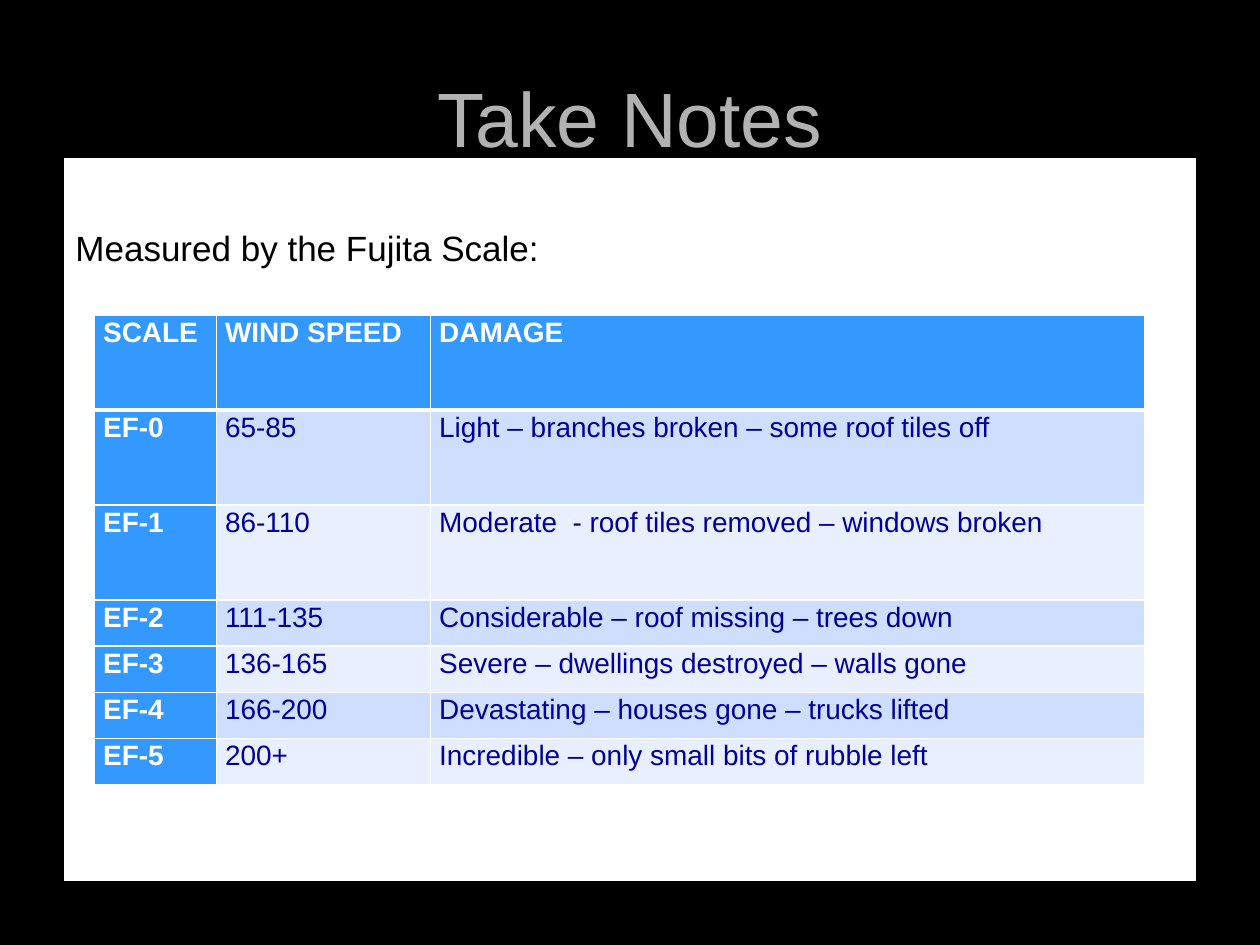
import dataclasses

import pptx
import pptx.dml.color
import pptx.enum.shapes
import pptx.enum.text
import pptx.oxml
import pptx.oxml.ns
import pptx.util

Pt = pptx.util.Pt


@dataclasses.dataclass(frozen=True)
class Theme:
    """Colours, font and type sizes of the slide."""
    font: str = "Arial"
    black: str = "000000"
    white: str = "FFFFFF"
    title: str = "B2B2B2"
    accent: str = "3399FF"
    ink: str = "010199"
    bands: tuple = ("CEDEFF", "E8EFFF")
    title_size: int = 44
    body_size: int = 20
    cell_size: int = 16


THEME = Theme()
COLUMNS = (69.6, 122.4, 408)
ROWS = (54.3,) * 3 + (26.4,) * 4
DATA = (
    ("SCALE", "WIND SPEED", "DAMAGE"),
    ("EF-0", "65-85", "Light – branches broken – some roof tiles off"),
    ("EF-1", "86-110", "Moderate  - roof tiles removed – windows broken"),
    ("EF-2", "111-135", "Considerable – roof missing – trees down"),
    ("EF-3", "136-165", "Severe – dwellings destroyed – walls gone"),
    ("EF-4", "166-200", "Devastating – houses gone – trucks lifted"),
    ("EF-5", "200+", "Incredible – only small bits of rubble left"),
)


def rgb(value):
    """Return the colour for a hex string."""
    return pptx.dml.color.RGBColor.from_string(value)


def paint(fill, color):
    """Make a fill solid in one colour."""
    fill.solid()
    fill.fore_color.rgb = rgb(color)


def write(tf, text, *, size, color, bold=False, align="LEFT", before=0, spacing=None):
    """Write one formatted paragraph into a text frame."""
    p = tf.paragraphs[0]
    p.alignment = pptx.enum.text.PP_ALIGN[align]
    p.space_before = Pt(before)
    if spacing:
        p.line_spacing = spacing
    r = p.add_run()
    r.text = text
    r.font.name = THEME.font
    r.font.size = Pt(size)
    r.font.bold = bold
    r.font.color.rgb = rgb(color)


def add_panel(s, x, y, w, h):
    """Add the white panel behind the content."""
    rect = pptx.enum.shapes.MSO_SHAPE.RECTANGLE
    sp = s.shapes.add_shape(rect, Pt(x), Pt(y), Pt(w), Pt(h))
    sp.shadow.inherit = False
    paint(sp.fill, THEME.white)
    sp.line.color.rgb = rgb(THEME.black)
    sp.line.width = Pt(0.75)


def add_text(s, text, x, y, w, h, anchor="TOP", **style):
    """Add a wrapped text box."""
    tf = s.shapes.add_textbox(Pt(x), Pt(y), Pt(w), Pt(h)).text_frame
    tf.word_wrap = True
    tf.vertical_anchor = pptx.enum.text.MSO_ANCHOR[anchor]
    write(tf, text, **style)


def set_borders(cell, color, **widths):
    """Draw the cell borders, with widths keyed by side in schema order."""
    ns = pptx.oxml.ns.nsdecls("a")
    tcPr = cell._tc.get_or_add_tcPr()
    for i, (side, width) in enumerate(widths.items()):
        tcPr.insert(i, pptx.oxml.parse_xml(
            f'<a:ln{side} {ns} w="{Pt(width)}"><a:solidFill>'
            f'<a:srgbClr val="{color}"/></a:solidFill></a:ln{side}>'))


def fill_cell(cell, text, row, col):
    """Format one table cell by its row and column."""
    heading = row == 0 or col == 0
    cell.margin_left = cell.margin_right = Pt(5)
    cell.margin_top = cell.margin_bottom = 0
    paint(cell.fill, THEME.accent if heading else THEME.bands[(row - 1) % 2])
    set_borders(cell, THEME.white, L=1, R=1,
                T=3 if row == 1 else 1, B=3 if row == 0 else 1)
    write(cell.text_frame, text, size=THEME.cell_size, bold=heading,
          color=THEME.white if heading else THEME.ink, spacing=1.07)


def add_scale_table(s, x, y):
    """Add the table of the scale."""
    shape = s.shapes.add_table(len(ROWS), len(COLUMNS), Pt(x), Pt(y),
                               Pt(sum(COLUMNS)), Pt(sum(ROWS)))
    table = shape.table
    for column, width in zip(table.columns, COLUMNS):
        column.width = Pt(width)
    for row, height in zip(table.rows, ROWS):
        row.height = Pt(height)
    for i, texts in enumerate(DATA):
        for j, text in enumerate(texts):
            fill_cell(table.cell(i, j), text, i, j)


def main():
    """Build and save the slide."""
    prs = pptx.Presentation()
    prs.slide_width, prs.slide_height = Pt(720), Pt(540)
    s = prs.slides.add_slide(prs.slide_layouts[6])
    paint(s.background.fill, THEME.black)
    add_panel(s, 36, 90, 648, 414)
    add_text(s, "Take Notes", 36, 21.6, 648, 90, anchor="MIDDLE",
             size=THEME.title_size, color=THEME.title, align="CENTER")
    add_text(s, "Measured by the Fujita Scale:", 36, 126, 648, 356.4,
             size=THEME.body_size, color=THEME.black, before=4)
    add_scale_table(s, 54, 180)
    prs.save("out.pptx")


if __name__ == "__main__":
    main()
